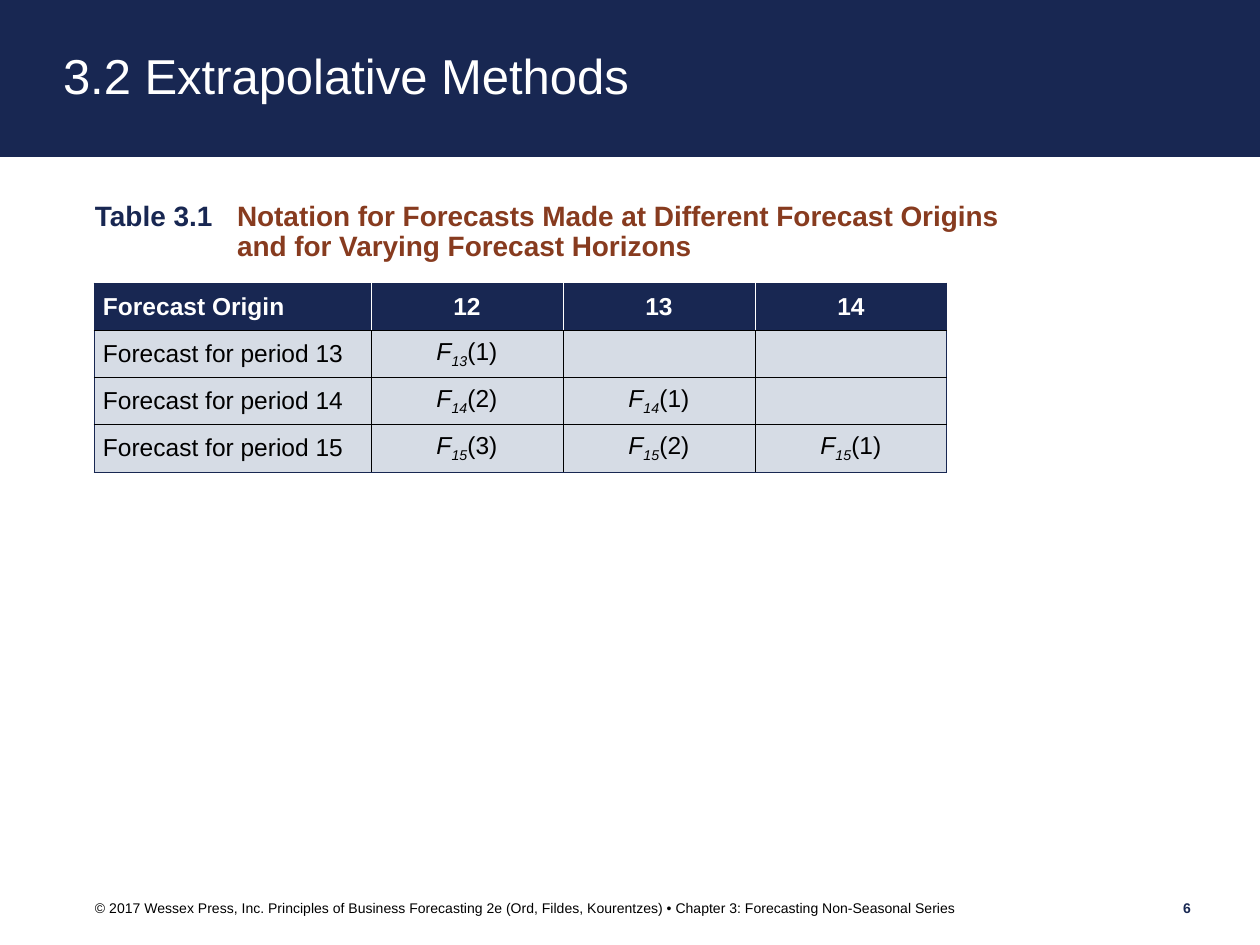
from lxml.etree import SubElement
from pptx import Presentation
from pptx.dml.color import RGBColor
from pptx.enum.text import MSO_ANCHOR, MSO_AUTO_SIZE, PP_ALIGN
from pptx.oxml.ns import qn
from pptx.util import Emu, Pt

EMU_PER_PX = 914400 / 126
NAVY = RGBColor(0x18, 0x27, 0x52)
RUST = RGBColor(0x87, 0x3B, 0x1F)
PALE = RGBColor(0xD6, 0xDC, 0xE5)
WHITE = RGBColor(0xFF, 0xFF, 0xFF)
BLACK = RGBColor(0x00, 0x00, 0x00)

ORIGINS = [12, 13, 14]
PERIODS = [13, 14, 15]
ORIGIN_COLUMN_WIDTH = 192
LABEL_COLUMN_WIDTH = 277


def px(length):
    return Emu(round(length * EMU_PER_PX))


def write_text(frame, runs, size, color=BLACK, bold=False, align=PP_ALIGN.LEFT, line_spacing=None):
    """Fill the first paragraph with (text, changes) runs; a "\\n" run is a line break."""
    paragraph = frame.paragraphs[0]
    paragraph.alignment = align
    paragraph.space_before = Pt(0)
    if line_spacing:
        paragraph.line_spacing = line_spacing
    for text, changes in runs:
        if text == "\n":
            paragraph.add_line_break()
            continue
        run = paragraph.add_run()
        run.text = text
        run.font.name = "Arial"
        run.font.size = Pt(size)
        run.font.bold = bold
        run.font.italic = changes.get("italic", False)
        run.font.color.rgb = changes.get("color", color)
        if changes.get("subscript"):
            run._r.get_or_add_rPr().set("baseline", "-25000")
    return paragraph


def set_insets(holder, left=0, top=0, right=0, bottom=0):
    holder.margin_left, holder.margin_top = px(left), px(top)
    holder.margin_right, holder.margin_bottom = px(right), px(bottom)


def place(shape, left, top, width, height):
    shape.left, shape.top, shape.width, shape.height = map(px, (left, top, width, height))


def add_title(slide, text):
    title = slide.shapes.title
    place(title, 0, 0, 1260, 157)
    title.fill.solid()
    title.fill.fore_color.rgb = NAVY
    frame = title.text_frame
    frame.auto_size = MSO_AUTO_SIZE.NONE
    frame.vertical_anchor = MSO_ANCHOR.MIDDLE
    set_insets(frame, left=63, top=6, bottom=6)
    write_text(frame, [(text, {})], size=28, color=WHITE, line_spacing=0.9)


def add_text(slide, box, runs, anchor=MSO_ANCHOR.MIDDLE, **text_format):
    frame = slide.shapes.add_textbox(*map(px, box)).text_frame
    frame.word_wrap = True
    frame.vertical_anchor = anchor
    set_insets(frame)
    return write_text(frame, runs, **text_format)


def add_caption(slide):
    runs = [
        ("Table 3.1\t", {"color": NAVY}),
        ("Notation for Forecasts Made at Different Forecast Origins ", {}),
        ("\n", {}),
        ("and for Varying Forecast Horizons", {}),
    ]
    caption = add_text(slide, (95, 202, 1040, 82), runs, anchor=MSO_ANCHOR.TOP,
                       size=16, color=RUST, bold=True, line_spacing=0.9)
    properties = caption._p.get_or_add_pPr()
    properties.set("marL", str(px(142)))
    properties.set("indent", str(px(-142)))


def set_borders(cell, **colors):
    properties = cell._tc.get_or_add_tcPr()
    for side in ("lnL", "lnR", "lnT", "lnB"):
        line = SubElement(properties, qn(f"a:{side}"), w=str(Pt(0.5)))
        fill = SubElement(line, qn("a:solidFill"))
        SubElement(fill, qn("a:srgbClr"), val=str(colors[side]))


def forecast_notation(period, origin):
    """Runs for F with the period as subscript and the horizon in brackets."""
    horizon = period - origin
    if horizon < 1:
        return []
    return [
        ("F", {"italic": True}),
        (str(period), {"italic": True, "subscript": True}),
        (f"({horizon})", {}),
    ]


def forecast_rows():
    header = [[("Forecast Origin", {})]] + [[(str(origin), {})] for origin in ORIGINS]
    body = [
        [[(f"Forecast for period {period}", {})]]
        + [forecast_notation(period, origin) for origin in ORIGINS]
        for period in PERIODS
    ]
    return [header] + body


def add_forecast_table(slide):
    rows = forecast_rows()
    last_row, last_column = len(PERIODS), len(ORIGINS)
    width = LABEL_COLUMN_WIDTH + len(ORIGINS) * ORIGIN_COLUMN_WIDTH
    table = slide.shapes.add_table(
        len(rows), last_column + 1, px(94), px(283), px(width), px(189)).table
    table.horz_banding = False
    for c, column in enumerate(table.columns):
        column.width = px(ORIGIN_COLUMN_WIDTH if c else LABEL_COLUMN_WIDTH)

    for r, row in enumerate(rows):
        is_header = r == 0
        divider = WHITE if is_header else BLACK
        for c, runs in enumerate(row):
            cell = table.cell(r, c)
            set_insets(cell, left=9, right=9)
            cell.vertical_anchor = MSO_ANCHOR.MIDDLE
            set_borders(
                cell,
                lnL=NAVY if c == 0 else divider,
                lnR=NAVY if c == last_column else divider,
                lnT=NAVY if is_header else BLACK,
                lnB=NAVY if r == last_row else BLACK,
            )
            cell.fill.solid()
            cell.fill.fore_color.rgb = NAVY if is_header else PALE
            write_text(cell.text_frame, runs, size=14, bold=is_header,
                       color=WHITE if is_header else BLACK,
                       align=PP_ALIGN.CENTER if c else PP_ALIGN.LEFT)


def main():
    presentation = Presentation()
    presentation.slide_width, presentation.slide_height = px(1260), px(945)
    slide = presentation.slides.add_slide(presentation.slide_layouts[5])
    add_title(slide, "3.2 Extrapolative Methods")
    add_text(slide, (1134, 895, 57, 25), [("6", {})],
             size=8, color=NAVY, bold=True, align=PP_ALIGN.RIGHT)
    copyright_line = (
        "© 2017 Wessex Press, Inc. Principles of Business Forecasting 2e "
        "(Ord, Fildes, Kourentzes) • Chapter 3: Forecasting Non-Seasonal Series"
    )
    add_text(slide, (95, 895, 1026, 25), [(copyright_line, {})], size=8)
    add_forecast_table(slide)
    add_caption(slide)
    presentation.save("out.pptx")


if __name__ == "__main__":
    main()
